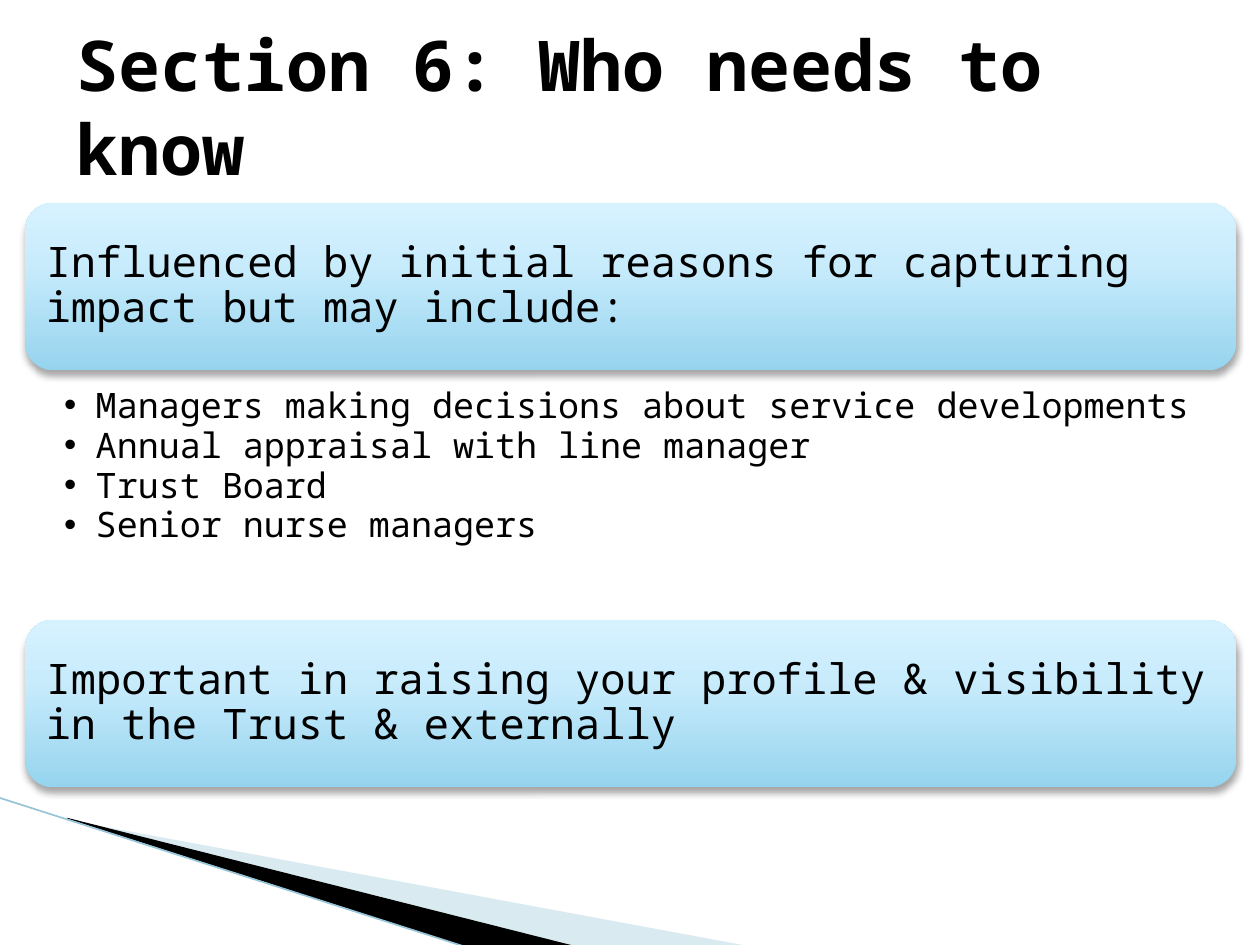
from lxml import etree
from pptx import Presentation
from pptx import util as u
from pptx.dml.color import RGBColor
from pptx.enum import shapes, text
from pptx.oxml import parse_xml
from pptx.oxml.ns import nsdecls, qn

FONT = "Noto Sans Mono"
BLACK = RGBColor(0x00, 0x00, 0x00)
PALE_BLUE = RGBColor(0xA0, 0xCB, 0xDC)
LINE_BLUE = RGBColor(0x97, 0xC5, 0xD8)
PANEL_STOPS = [
    (0, RGBColor(0x96, 0xD4, 0xEE)),
    (65, RGBColor(0xC9, 0xEC, 0xFC)),
    (100, RGBColor(0xD7, 0xF2, 0xFF)),
]
PANEL_LEFT, PANEL_WIDTH, PANEL_HEIGHT = 0.2, 9.61, 1.33
AUDIENCES = [
    "Managers making decisions about service developments",
    "Annual appraisal with line manager",
    "Trust Board",
    "Senior nurse managers",
]


def place(sp, left, top, width, height):
    sp.left, sp.top = u.Inches(left), u.Inches(top)
    sp.width, sp.height = u.Inches(width), u.Inches(height)


def set_frame(tf, anchor, left, top, right, bottom):
    tf.word_wrap = True
    tf.auto_size = text.MSO_AUTO_SIZE.NONE
    tf.vertical_anchor = anchor
    tf.margin_left, tf.margin_right = u.Inches(left), u.Inches(right)
    tf.margin_top, tf.margin_bottom = u.Inches(top), u.Inches(bottom)


def add_run(p, words, size, bold=False):
    p.alignment = text.PP_ALIGN.LEFT
    r = p.add_run()
    r.text = words
    r.font.name = FONT
    r.font.size = u.Pt(size)
    r.font.bold = bold
    r.font.color.rgb = BLACK


def add_wedge(s, points, color, alpha=None):
    corners = [(u.Inches(x), u.Inches(y)) for x, y in points]
    builder = s.shapes.build_freeform(*corners[0])
    builder.add_line_segments(corners[1:], close=True)
    sp = builder.convert_to_shape()
    sp.shadow.inherit = False
    sp.fill.solid()
    sp.fill.fore_color.rgb = color
    sp.line.fill.background()
    if alpha is not None:
        clr = sp._element.spPr.find(f".//{qn('a:srgbClr')}")
        etree.SubElement(clr, qn("a:alpha"), val=str(alpha * 1000))


def add_edge_line(s):
    line = s.shapes.add_connector(
        shapes.MSO_CONNECTOR.STRAIGHT,
        u.Inches(-0.01), u.Inches(6.33), u.Inches(3.71), u.Inches(7.52))
    line.line.color.rgb = LINE_BLUE
    line.line.width = u.Pt(0.95)
    etree.SubElement(line._element.spPr, qn("a:effectLst"))


def add_panel(s, top, words):
    sp = s.shapes.add_shape(
        shapes.MSO_SHAPE.ROUNDED_RECTANGLE, u.Inches(PANEL_LEFT), u.Inches(top),
        u.Inches(PANEL_WIDTH), u.Inches(PANEL_HEIGHT))
    sp.line.fill.background()

    # Gradient from dark at the bottom to light at the top, with a soft shadow
    stops = "".join(
        f'<a:gs pos="{pos * 1000}"><a:srgbClr val="{color}"/></a:gs>'
        for pos, color in PANEL_STOPS)
    spPr = sp._element.spPr
    spPr.insert(2, parse_xml(
        f'<a:gradFill {nsdecls("a")} rotWithShape="1"><a:gsLst>{stops}</a:gsLst>'
        '<a:lin ang="16200000" scaled="0"/></a:gradFill>'))
    spPr.append(parse_xml(
        f'<a:effectLst {nsdecls("a")}><a:outerShdw blurRad="{u.Pt(4)}" '
        f'dist="{u.Pt(3)}" dir="5400000" rotWithShape="0">'
        '<a:srgbClr val="000000"><a:alpha val="35000"/></a:srgbClr>'
        '</a:outerShdw></a:effectLst>'))

    # Text sits in a box inset evenly from the panel edge
    inset = 0.065
    box = s.shapes.add_textbox(0, 0, 0, 0)
    place(box, PANEL_LEFT + inset, top + inset,
          PANEL_WIDTH - 2 * inset, PANEL_HEIGHT - 2 * inset)
    set_frame(box.text_frame, text.MSO_ANCHOR.MIDDLE, 0.1, 0.1, 0.1, 0.1)
    p = box.text_frame.paragraphs[0]
    p.line_spacing = 0.9
    add_run(p, words, 24)


def fill_title(sp, words):
    place(sp, 0.51, 0.21, 9, 1.25)
    set_frame(sp.text_frame, text.MSO_ANCHOR.MIDDLE, 0.1, 0.05, 0.1, 0.05)
    add_run(sp.text_frame.paragraphs[0], words, 40, bold=True)


def fill_list(sp, items):
    place(sp, PANEL_LEFT, 3.05, PANEL_WIDTH, 1.88)
    tf = sp.text_frame
    set_frame(tf, text.MSO_ANCHOR.TOP, 0.31, 0.03, 0.16, 0.03)
    for i, item in enumerate(items):
        p = tf.add_paragraph() if i else tf.paragraphs[0]
        p.level = 1
        pPr = p._p.get_or_add_pPr()
        pPr.set("marL", str(u.Inches(0.25)))
        pPr.set("indent", str(u.Inches(-0.25)))
        etree.SubElement(pPr, qn("a:buChar"), char="•")
        p.line_spacing = 0.9
        p.space_before = u.Pt(0)
        p.space_after = u.Pt(1.2)
        add_run(p, item, 20)


def main():
    prs = Presentation()
    prs.slide_width, prs.slide_height = u.Inches(10), u.Inches(7.5)
    s = prs.slides.add_slide(prs.slide_layouts[1])

    # Corner decoration
    add_wedge(s, [(0.55, 6.51), (5.95, 7.51), (4.56, 7.51), (0.55, 6.5)],
              PALE_BLUE, alpha=40)
    add_wedge(s, [(0.53, 6.49), (4.57, 7.51), (3.72, 7.52), (0.54, 6.5)], BLACK)
    add_edge_line(s)

    # Title, panels and list
    fill_title(s.shapes.title, "Section 6: Who needs to know")
    add_panel(s, 1.61, "Influenced by initial reasons for capturing impact "
                       "but may include:")
    fill_list(s.placeholders[1], AUDIENCES)
    add_panel(s, 4.92, "Important in raising your profile & visibility in the "
                       "Trust & externally")

    prs.save("out.pptx")


if __name__ == "__main__":
    main()
